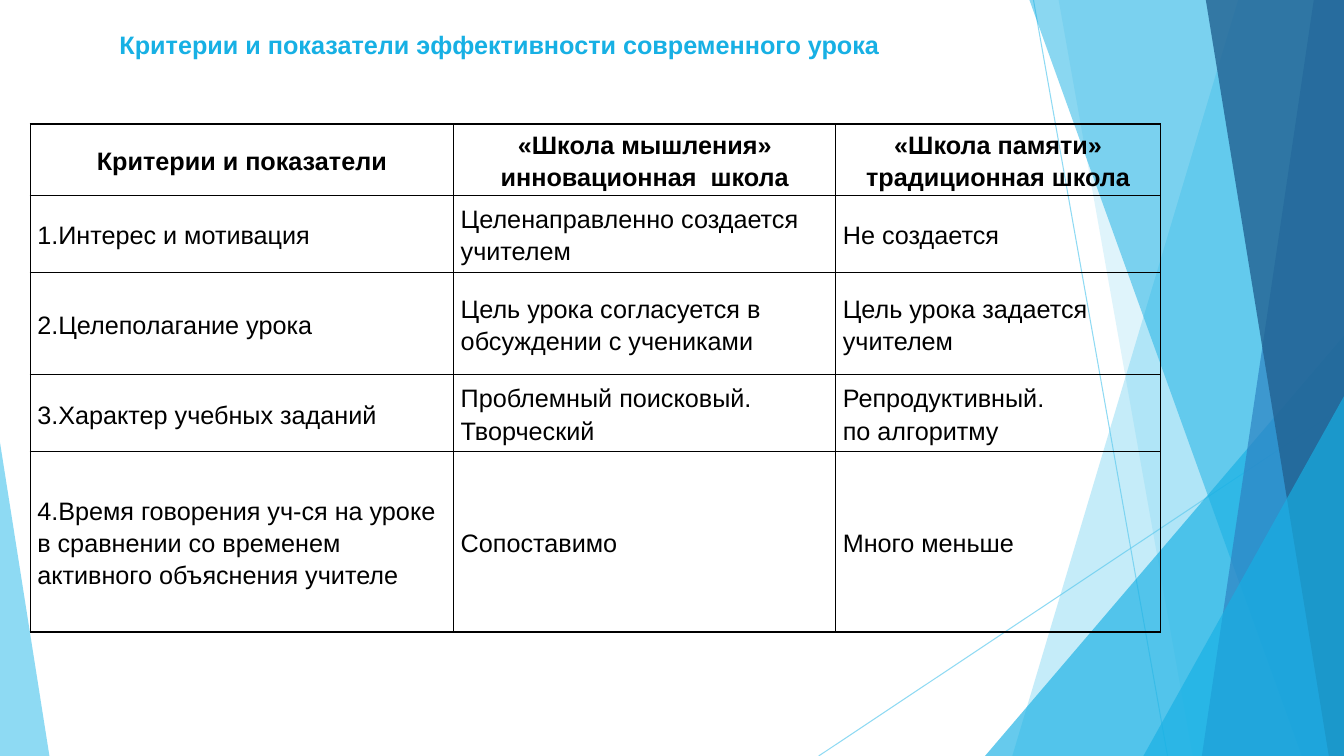
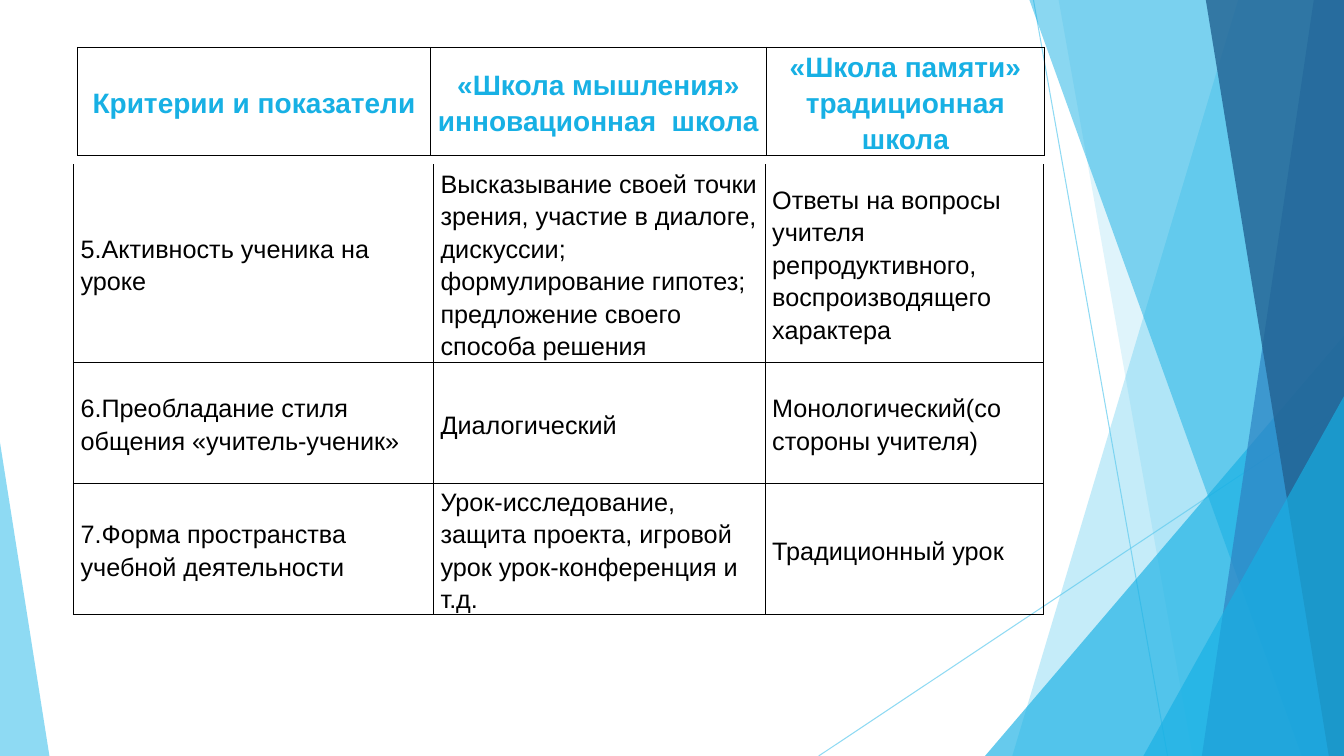
from lxml.etree import SubElement
from pptx import Presentation
from pptx.dml.color import RGBColor
from pptx.enum.shapes import MSO_CONNECTOR, MSO_SHAPE
from pptx.enum.text import MSO_ANCHOR, PP_ALIGN
from pptx.oxml.ns import qn
from pptx.util import Inches, Pt

# Shared style
WIDTH, HEIGHT = 13.33, 7.5
FONT = "Arial"
BLACK, SKY, ACCENT, BLUE, NAVY = "000000", "5FCBEF", "17B0E4", "2E83C3", "226292"
TITLE_ONLY, BLANK = 5, 6
CELL_INSET = 0.07

# Backdrop, back to front
RAYS = [(10.25, 0, 11.58, HEIGHT), (WIDTH, 4.03, 8.12, HEIGHT)]
BAND, WEDGE = "band", "wedge"
PANELS = [  # band: top x, bottom x; wedge: left, top, width, apex
    (BAND, (12.28, 10.04), SKY, 36),
    (BAND, (10.5, 11.83), SKY, 20),
    (WEDGE, (9.77, 3.33, 3.56, 1), ACCENT, 66),
    (BAND, (10.21, 12.91), ACCENT, 50),
    (BAND, (13.03, 11.92), BLUE, 70),
    (BAND, (11.96, 13.18), NAVY, 80),
    (WEDGE, (11.34, 3.93, 1.99, 1), ACCENT, 66),
    (WEDGE, (0, 4.39, 0.49, 0), SKY, 70),
]

HEADINGS = [
    "Критерии и показатели",
    "«Школа мышления»\nинновационная  школа",
    "«Школа памяти»\nтрадиционная школа",
]
FIRST_CRITERIA = [
    ["1.Интерес и мотивация", "Целенаправленно создается учителем", "Не создается"],
    ["2.Целеполагание урока", "Цель урока согласуется в обсуждении с учениками",
     "Цель урока задается учителем"],
    ["3.Характер учебных заданий", "Проблемный поисковый. Творческий",
     "Репродуктивный.\nпо алгоритму"],
    ["4.Время говорения уч-ся на уроке в сравнении со временем активного объяснения учителе",
     "Сопоставимо", "Много меньше"],
]
LAST_CRITERIA = [
    ["5.Активность ученика на уроке",
     "Высказывание своей точки зрения, участие в диалоге, дискуссии; "
     "формулирование гипотез; предложение своего способа решения",
     "Ответы на вопросы учителя репродуктивного, воспроизводящего характера"],
    ["6.Преобладание стиля общения «учитель-ученик»", "Диалогический",
     "Монологический(со стороны учителя)"],
    ["7.Форма пространства учебной деятельности",
     "Урок-исследование, защита проекта, игровой урок урок-конференция и т.д.",
     "Традиционный урок"],
]


def rgb(value):
    return RGBColor.from_string(value)


def write(frame, text, size=18, color=BLACK, bold=False, align=PP_ALIGN.LEFT):
    """Fill a text frame, one paragraph for each line."""
    frame.word_wrap = True
    for index, line in enumerate(text.split("\n")):
        paragraph = frame.add_paragraph() if index else frame.paragraphs[0]
        paragraph.alignment = align
        paragraph.line_spacing = 1.15
        paragraph.space_before = Pt(0)
        run = paragraph.add_run()
        run.text = line
        run.font.name, run.font.size, run.font.bold = FONT, Pt(size), bold
        run.font.color.rgb = rgb(color)


def set_alpha(shape, percent):
    for color in shape._element.spPr.iter(qn("a:srgbClr")):
        SubElement(color, qn("a:alpha"), val=str(percent * 1000))


def add_ray(slide, x1, y1, x2, y2):
    ray = slide.shapes.add_connector(
        MSO_CONNECTOR.STRAIGHT, Inches(x1), Inches(y1), Inches(x2), Inches(y2))
    ray.line.color.rgb = rgb(SKY)
    ray.line.width = Pt(0.75)
    set_alpha(ray, 70)
    SubElement(ray._element.spPr, qn("a:effectLst"))


def add_band(slide, top_x, bottom_x):
    """Full-height band from a slanted left side to the right slide edge."""
    outline = slide.shapes.build_freeform(Inches(top_x), 0)
    corners = [(WIDTH, 0), (WIDTH, HEIGHT), (bottom_x, HEIGHT)]
    outline.add_line_segments([(Inches(x), Inches(y)) for x, y in corners])
    return outline.convert_to_shape()


def add_wedge(slide, left, top, width, apex):
    """Triangle that stands on the bottom slide edge."""
    wedge = slide.shapes.add_shape(
        MSO_SHAPE.ISOSCELES_TRIANGLE, Inches(left), Inches(top),
        Inches(width), Inches(HEIGHT - top))
    wedge.adjustments[0] = apex
    return wedge


def add_backdrop(slide):
    for ray in RAYS:
        add_ray(slide, *ray)
    for kind, geometry, color, alpha in PANELS:
        panel = (add_band if kind == BAND else add_wedge)(slide, *geometry)
        panel.shadow.inherit = False
        panel.fill.solid()
        panel.fill.fore_color.rgb = rgb(color)
        panel.line.fill.background()
        set_alpha(panel, alpha)


def add_title(slide, text, left, top, width, height):
    title = slide.shapes.title
    title.left, title.top = Inches(left), Inches(top)
    title.width, title.height = Inches(width), Inches(height)
    title.text_frame.vertical_anchor = MSO_ANCHOR.MIDDLE
    write(title.text_frame, text, color=ACCENT, bold=True, align=PP_ALIGN.CENTER)


def set_borders(cell, open_top):
    properties = cell._tc.get_or_add_tcPr()
    for side in "LRTB":
        border = SubElement(properties, qn(f"a:ln{side}"), w=str(Pt(1)))
        if side == "T" and open_top:
            SubElement(border, qn("a:noFill"))
        else:
            fill = SubElement(border, qn("a:solidFill"))
            SubElement(fill, qn("a:srgbClr"), val=BLACK)


def add_criteria(slide, left, top, widths, heights, rows, heading=None, open_top=False):
    """Ruled table; heading holds the text format of its first row, if any."""
    table = slide.shapes.add_table(
        len(rows), len(widths), Inches(left), Inches(top),
        Inches(sum(widths)), Inches(sum(heights))).table
    table.first_row = table.horz_banding = False
    for column, width in zip(table.columns, widths):
        column.width = Inches(width)
    for r, (texts, height) in enumerate(zip(rows, heights)):
        table.rows[r].height = Inches(height)
        for c, text in enumerate(texts):
            cell = table.cell(r, c)
            cell.margin_left = cell.margin_right = Inches(CELL_INSET)
            cell.margin_top = cell.margin_bottom = 0
            cell.vertical_anchor = MSO_ANCHOR.MIDDLE
            set_borders(cell, open_top and r == 0)
            cell.fill.background()
            if heading and r == 0:
                write(cell.text_frame, text, bold=True, align=PP_ALIGN.CENTER, **heading)
            else:
                write(cell.text_frame, text)


def add_slide(deck, layout):
    slide = deck.slides.add_slide(deck.slide_layouts[layout])
    add_backdrop(slide)
    return slide


def first_slide(deck):
    slide = add_slide(deck, TITLE_ONLY)
    add_title(slide, "Критерии и показатели эффективности современного урока",
              0.6, 0.2, 8.71, 0.43)
    add_criteria(slide, 0.3, 1.23, [4.2, 3.79, 3.22], [0.71, 0.76, 1.02, 0.76, 1.79],
                 [HEADINGS] + FIRST_CRITERIA, heading={"color": BLACK})


def second_slide(deck):
    slide = add_slide(deck, BLANK)
    add_criteria(slide, 0.77, 0.47, [3.5, 3.33, 2.76], [0.9], [HEADINGS],
                 heading={"color": ACCENT, "size": 20})
    add_criteria(slide, 0.73, 1.63, [3.57, 3.29, 2.76], [1.97, 1.2, 1.3],
                 LAST_CRITERIA, open_top=True)


def main():
    deck = Presentation()
    deck.slide_width, deck.slide_height = Inches(WIDTH), Inches(HEIGHT)
    first_slide(deck)
    second_slide(deck)
    deck.save("out.pptx")


if __name__ == "__main__":
    main()
